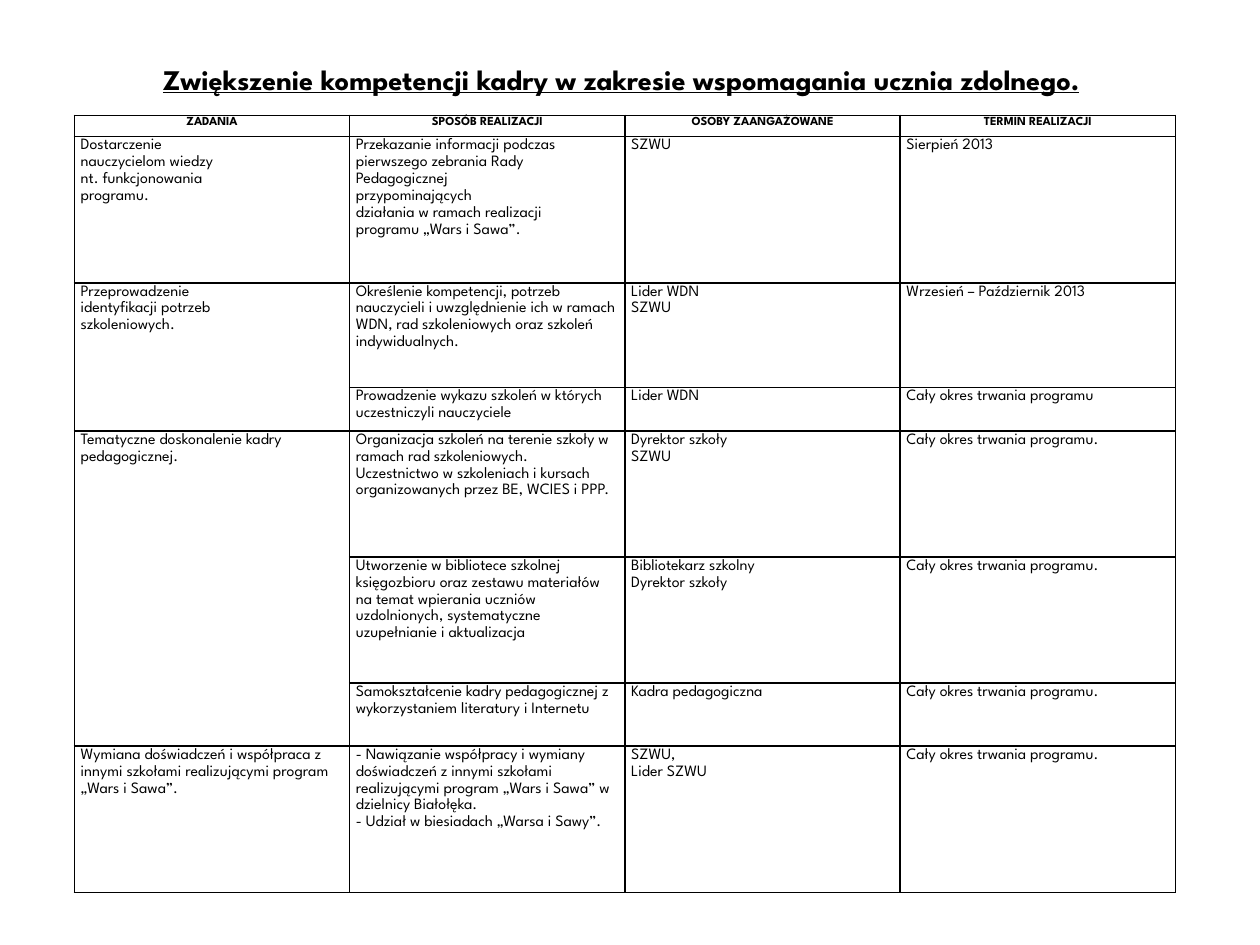
import pptx
import pptx.dml.color
import pptx.enum.text
import pptx.oxml
import pptx.oxml.ns
import pptx.util

Pt = pptx.util.Pt
BLACK = pptx.dml.color.RGBColor(0, 0, 0)
FONT = "League Spartan"
CENTER = pptx.enum.text.PP_ALIGN.CENTER
LEFT = pptx.enum.text.PP_ALIGN.LEFT

TITLE = "Zwiększenie kompetencji kadry w zakresie wspomagania ucznia zdolnego."
WHOLE_PROGRAM = "Cały okres trwania programu."
ROW_HEIGHTS = [12, 83.6, 59.8, 24, 72, 72, 36, 83.6]
MERGED_TASKS = [(2, 3), (4, 6)]
ROWS = [
    ["ZADANIA", "SPOSÓB REALIZACJI", "OSOBY ZAANGAŻOWANE", "TERMIN REALIZACJI"],
    ["Dostarczenie\nnauczycielom wiedzy\nnt. funkcjonowania\nprogramu.",
     "Przekazanie informacji podczas\npierwszego zebrania Rady\nPedagogicznej\nprzypominających\n"
     "działania w ramach realizacji\nprogramu „Wars i Sawa”.",
     "SZWU", "Sierpień 2013"],
    ["Przeprowadzenie\nidentyfikacji potrzeb\nszkoleniowych.",
     "Określenie kompetencji, potrzeb nauczycieli i uwzględnienie ich w ramach WDN, "
     "rad szkoleniowych oraz szkoleń indywidualnych.",
     "Lider WDN\nSZWU", "Wrzesień – Październik 2013"],
    ["", "Prowadzenie wykazu szkoleń w których uczestniczyli nauczyciele",
     "Lider WDN", "Cały okres trwania programu"],
    ["Tematyczne doskonalenie kadry pedagogicznej.",
     "Organizacja szkoleń na terenie szkoły w ramach rad szkoleniowych.\n"
     "Uczestnictwo w szkoleniach i kursach organizowanych przez BE, WCIES i PPP.",
     "Dyrektor szkoły\nSZWU", WHOLE_PROGRAM],
    ["", "Utworzenie w bibliotece szkolnej księgozbioru oraz zestawu materiałów na temat "
     "wpierania uczniów uzdolnionych, systematyczne uzupełnianie i aktualizacja",
     "Bibliotekarz szkolny\nDyrektor szkoły", WHOLE_PROGRAM],
    ["", "Samokształcenie kadry pedagogicznej z wykorzystaniem literatury i Internetu",
     "Kadra pedagogiczna", WHOLE_PROGRAM],
    ["Wymiana doświadczeń i współpraca z innymi szkołami realizującymi program „Wars i Sawa”.",
     "- Nawiązanie współpracy i wymiany doświadczeń z innymi szkołami realizującymi program "
     "„Wars i Sawa” w dzielnicy Białołęka.\n- Udział w biesiadach „Warsa i Sawy”.",
     "SZWU,\nLider SZWU", WHOLE_PROGRAM],
]


def style_paragraph(para, size, bold, align):
    para.alignment = align
    for span in para.runs:
        span.font.name = FONT
        span.font.size = Pt(size)
        span.font.bold = bold
        span.font.color.rgb = BLACK


def add_title(page, left, top, width, height):
    box = page.shapes.add_textbox(Pt(left), Pt(top), Pt(width), Pt(height))
    frame = box.text_frame
    frame.word_wrap = True
    frame.vertical_anchor = pptx.enum.text.MSO_ANCHOR.MIDDLE
    frame.text = TITLE
    para = frame.paragraphs[0]
    style_paragraph(para, 16.2, True, CENTER)
    para.runs[0].font.underline = True


def add_borders(cell):
    properties = cell._tc.get_or_add_tcPr()
    for side in ("lnL", "lnR", "lnT", "lnB"):
        properties.append(pptx.oxml.parse_xml(
            f'<a:{side} {pptx.oxml.ns.nsdecls("a")} w="{Pt(1)}">'
            f'<a:solidFill><a:srgbClr val="{BLACK}"/></a:solidFill></a:{side}>'))


def fill_cell(cell, text, is_header):
    add_borders(cell)
    cell.fill.background()
    cell.margin_left = cell.margin_right = Pt(3.6)
    cell.margin_top = cell.margin_bottom = Pt(0)
    cell.text_frame.text = text
    for para in cell.text_frame.paragraphs:
        para.line_spacing = 1.15
        if is_header:
            style_paragraph(para, 7, True, CENTER)
        else:
            style_paragraph(para, 9, False, LEFT)
        if not text:
            para.font.size = Pt(9)


def add_plan_table(page, left, top, width):
    frame = page.shapes.add_table(len(ROWS), len(ROWS[0]), Pt(left), Pt(top),
                                  Pt(width), Pt(sum(ROW_HEIGHTS)))
    table = frame.table
    table.first_row = table.horz_banding = False
    for column in table.columns:
        column.width = Pt(width / len(ROWS[0]))
    for row_index, (texts, height) in enumerate(zip(ROWS, ROW_HEIGHTS)):
        table.rows[row_index].height = Pt(height)
        for column_index, text in enumerate(texts):
            fill_cell(table.cell(row_index, column_index), text, row_index == 0)
    for first, last in MERGED_TASKS:
        table.cell(first, 0).merge(table.cell(last, 0))


def main():
    deck = pptx.Presentation()
    deck.slide_width, deck.slide_height = Pt(720), Pt(540)
    page = deck.slides.add_slide(deck.slide_layouts[6])
    add_title(page, 31, 0, 648, 90)
    add_plan_table(page, 42.5, 66, 629.2)
    deck.save("out.pptx")


if __name__ == "__main__":
    main()
